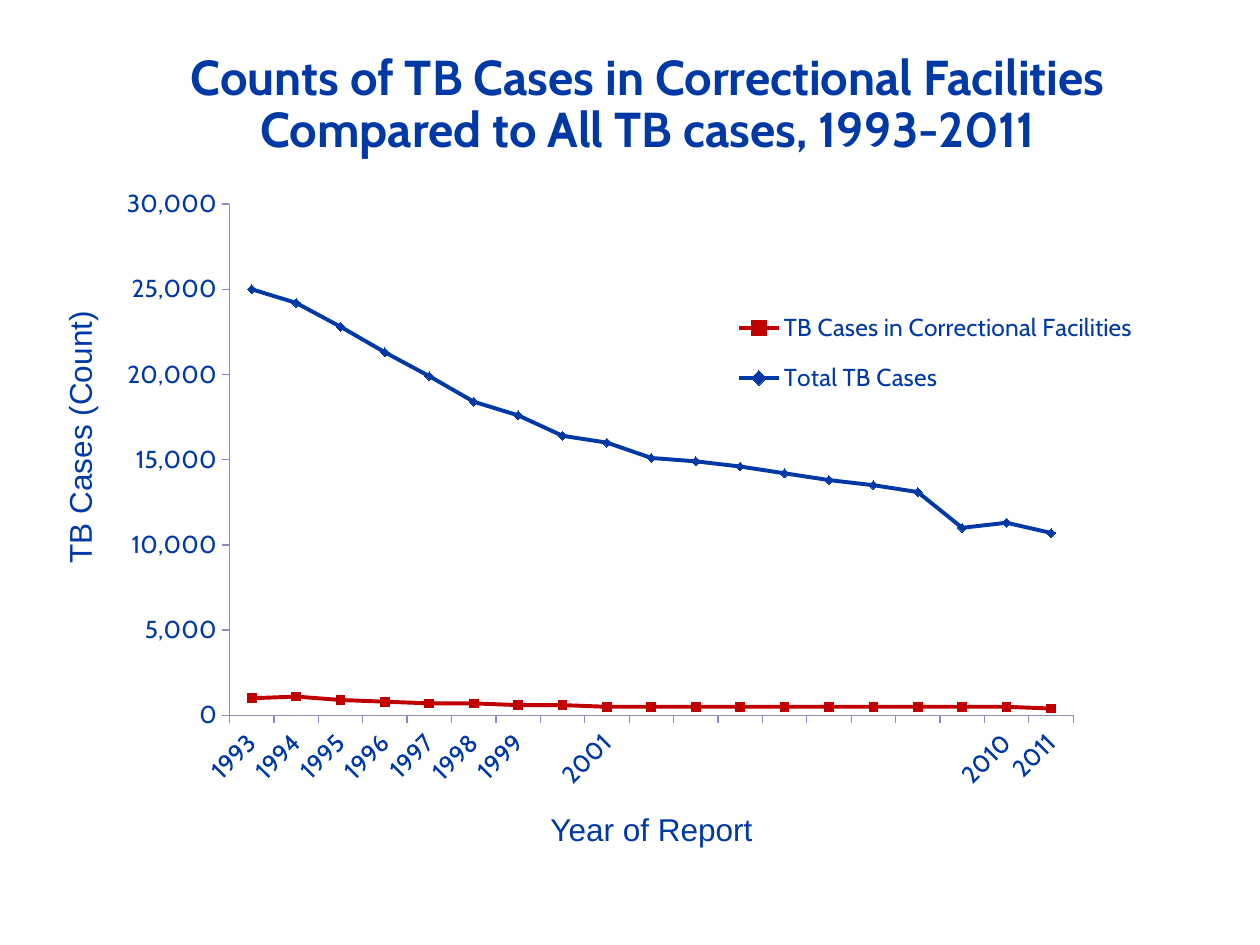
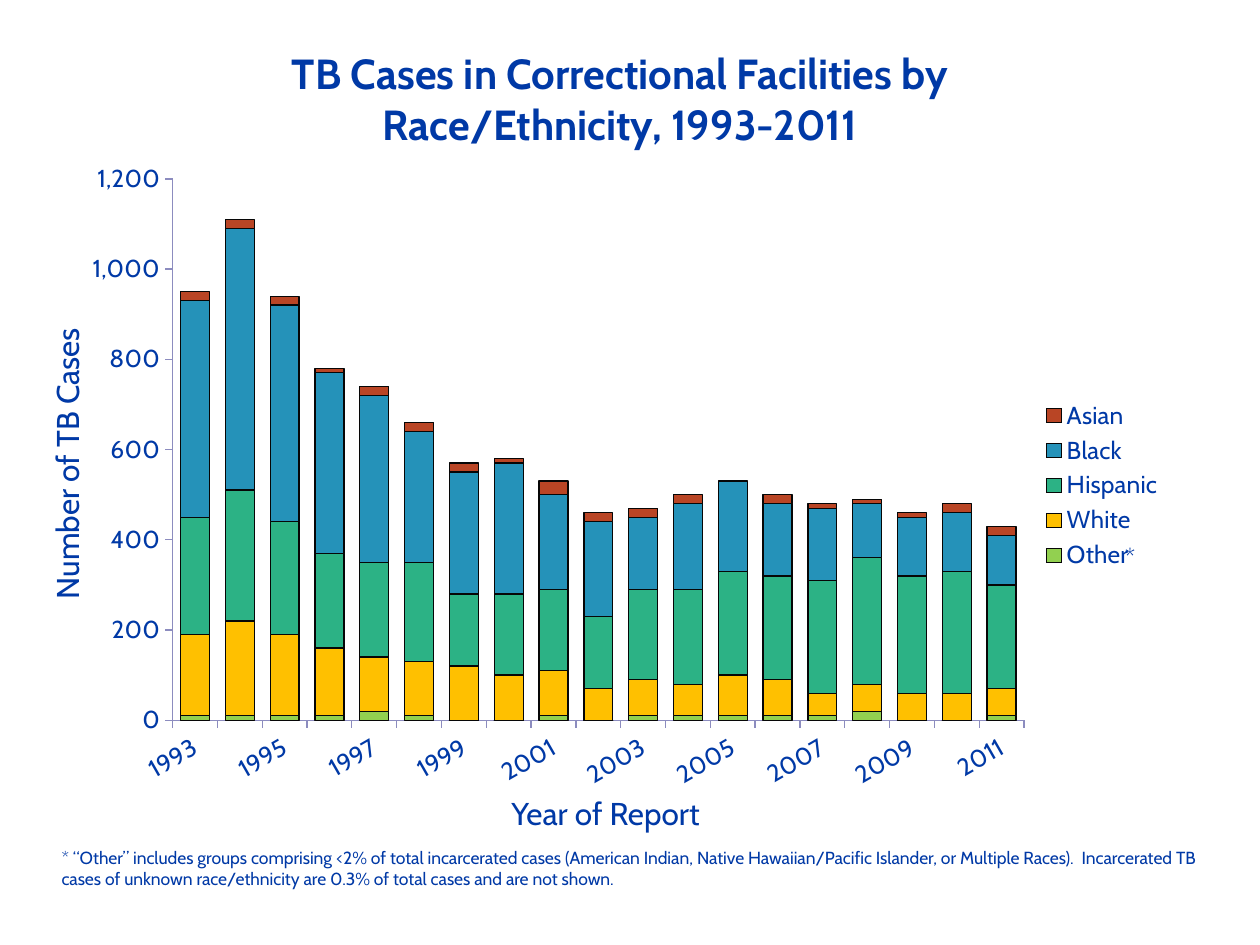
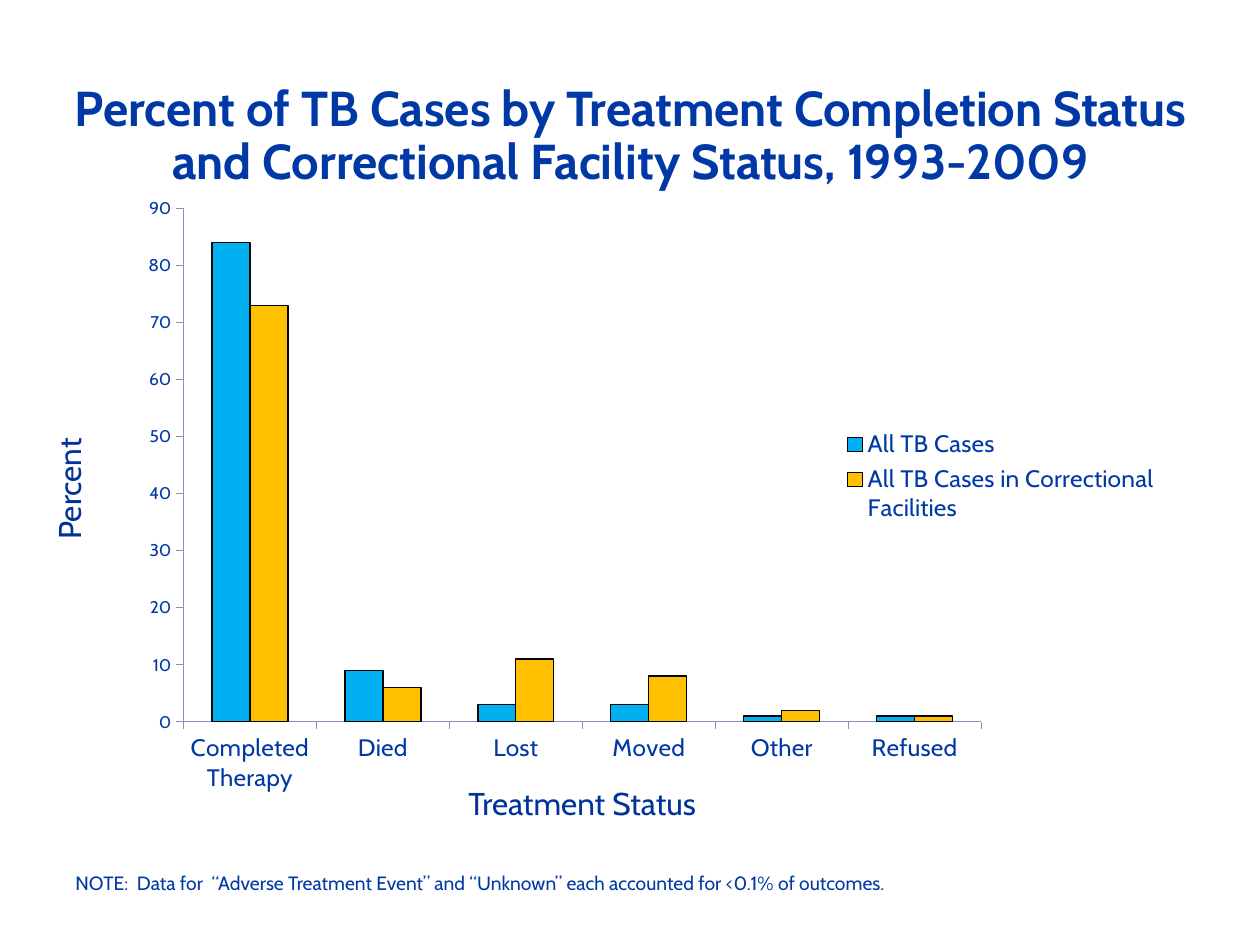
from dataclasses import dataclass

from lxml import etree
from pptx import Presentation
from pptx.chart.data import CategoryChartData
from pptx.dml.color import RGBColor
from pptx.enum.chart import XL_CHART_TYPE, XL_LEGEND_POSITION, XL_TICK_MARK
from pptx.enum.text import MSO_ANCHOR, PP_ALIGN
from pptx.oxml.ns import qn
from pptx.util import Pt

LINE = XL_CHART_TYPE.LINE
STACKED = XL_CHART_TYPE.COLUMN_STACKED
CLUSTERED = XL_CHART_TYPE.COLUMN_CLUSTERED
LEGEND_RIGHT = XL_LEGEND_POSITION.RIGHT
TICK_OUTSIDE, TICK_NONE = XL_TICK_MARK.OUTSIDE, XL_TICK_MARK.NONE
LEFT, CENTER = PP_ALIGN.LEFT, PP_ALIGN.CENTER
TOP, BOTTOM = MSO_ANCHOR.TOP, MSO_ANCHOR.BOTTOM

# Shared scale, colours and fonts
PX = 9144  # 100 px to the inch
BLUE = RGBColor(0x00, 0x39, 0xA6)
DARK_BLUE = RGBColor(0x00, 0x34, 0x98)
AXIS_BLUE = RGBColor(0x8C, 0x8C, 0xBF)
OUTLINE = RGBColor(0x06, 0x06, 0x06)
DARK_RED = RGBColor(0xC0, 0x00, 0x00)
LIME = RGBColor(0x92, 0xD0, 0x50)
GOLD = RGBColor(0xFF, 0xC0, 0x00)
GREEN = RGBColor(0x2C, 0xB2, 0x85)
TEAL = RGBColor(0x25, 0x92, 0xB9)
RUST = RGBColor(0xB9, 0x45, 0x25)
SKY = RGBColor(0x00, 0xB0, 0xF0)
CABIN, ARIAL = "Cabin", "Arial"
YEARS = [str(year) for year in range(1993, 2012)]

Box = tuple[int, int, int, int]
Layout = tuple[float, float, float, float]


@dataclass(frozen=True)
class Label:
    text: str
    box: Box
    size: int = 18
    font: str = CABIN
    color: RGBColor = BLUE
    bold: bool = False
    align: PP_ALIGN = CENTER
    anchor: MSO_ANCHOR = TOP
    line_points: int = 0
    vertical: bool = False
    rotation: int = 0
    wrap: bool = True


@dataclass(frozen=True)
class Series:
    name: str
    color: RGBColor
    values: list[int]


@dataclass(frozen=True)
class ChartPanel:
    kind: XL_CHART_TYPE
    box: Box
    plot: Layout
    legend: Layout
    categories: list[str]
    series: list[Series]
    maximum: int
    step: int
    number_format: str = "#,##0"
    value_size: int = 14
    label_angle: int = 0
    gap: int = 150
    overlap: int = 0


def title(text: str, box: Box) -> Label:
    return Label(text, box, size=28, bold=True, anchor=BOTTOM, line_points=30)


def add_label(slide, label: Label) -> None:
    shape = slide.shapes.add_textbox(*(value * PX for value in label.box))
    shape.rotation = label.rotation
    frame = shape.text_frame
    frame.word_wrap = label.wrap
    frame.vertical_anchor = label.anchor
    if label.vertical:
        frame._txBody.bodyPr.set("vert", "vert270")
    paragraph = frame.paragraphs[0]
    paragraph.text = label.text
    paragraph.alignment = label.align
    if label.line_points:
        paragraph.line_spacing = Pt(label.line_points)
    font = paragraph.font
    font.name, font.size, font.bold = label.font, Pt(label.size), label.bold
    font.color.rgb = label.color


def set_layout(element, layout: Layout, inner: bool = False) -> None:
    """Place a plot area or legend by fractions of the chart."""
    for old in element.findall(qn("c:layout")):
        element.remove(old)
    node = etree.Element(qn("c:layout"))
    manual = etree.SubElement(node, qn("c:manualLayout"))
    settings = [("layoutTarget", "inner")] if inner else []
    settings += [("xMode", "edge"), ("yMode", "edge")]
    settings += zip("xywh", map(str, layout))
    for tag, value in settings:
        etree.SubElement(manual, qn(f"c:{tag}")).set("val", value)
    position = element.find(qn("c:legendPos"))
    if position is None:
        element.insert(0, node)
    else:
        position.addnext(node)


def style_axis(axis, size: int) -> None:
    axis.has_major_gridlines = False
    axis.major_tick_mark, axis.minor_tick_mark = TICK_OUTSIDE, TICK_NONE
    axis.format.line.color.rgb = AXIS_BLUE
    axis.format.line.width = Pt(0.75)
    font = axis.tick_labels.font
    font.name, font.size, font.color.rgb = CABIN, Pt(size), BLUE


def add_chart_panel(slide, panel: ChartPanel) -> None:
    data = CategoryChartData()
    data.categories = panel.categories
    for series in panel.series:
        data.add_series(series.name, series.values)
    box = (value * PX for value in panel.box)
    chart = slide.shapes.add_chart(panel.kind, *box, data).chart
    chart.has_title = False
    chart.font.name, chart.font.size, chart.font.color.rgb = CABIN, Pt(14), BLUE

    # Axes
    style_axis(chart.category_axis, 14)
    style_axis(chart.value_axis, panel.value_size)
    if panel.label_angle:
        body = chart.category_axis._element.find(qn("c:txPr")).find(qn("a:bodyPr"))
        body.set("rot", str(panel.label_angle * 60000))
    value_axis = chart.value_axis
    value_axis.minimum_scale, value_axis.maximum_scale = 0, panel.maximum
    value_axis.major_unit = panel.step
    value_axis.tick_labels.number_format = panel.number_format
    value_axis.tick_labels.number_format_is_linked = False

    # Legend and plot area
    chart.has_legend = True
    chart.legend.position = LEGEND_RIGHT
    chart.legend.include_in_layout = False
    set_layout(chart.legend._element, panel.legend)
    set_layout(chart._chartSpace.chart.plotArea, panel.plot, inner=True)

    # Series
    plot = chart.plots[0]
    plot.vary_by_categories = False
    if panel.kind != LINE:
        plot.gap_width, plot.overlap = panel.gap, panel.overlap
    for drawn, series in zip(plot.series, panel.series):
        line = drawn.format.line
        if panel.kind == LINE:
            drawn.smooth = False
            drawn.marker.style = None
            line.color.rgb, line.width = series.color, Pt(2.25)
        else:
            drawn.format.fill.solid()
            drawn.format.fill.fore_color.rgb = series.color
            line.color.rgb, line.width = OUTLINE, Pt(0.75)


# Slide contents
COUNTS = [
    title("Counts of TB Cases in Correctional Facilities Compared to All TB cases, "
          "1993-2011", (64, 5, 900, 125)),
    ChartPanel(
        LINE, (93, 150, 833, 479), (0.107, 0.023, 0.804, 0.849),
        (0.58, 0.17, 0.4, 0.2), YEARS,
        [
            Series("TB Cases in Correctional Facilities", DARK_RED,
                   [1000, 1100, 900, 800, 700, 700, 600, 600, 500, 500,
                    500, 500, 500, 500, 500, 500, 500, 500, 400]),
            Series("Total TB Cases", BLUE,
                   [25000, 24200, 22800, 21300, 19900, 18400, 17600, 16400, 16000, 15100,
                    14900, 14600, 14200, 13800, 13500, 13100, 11000, 11300, 10700]),
        ],
        maximum=30000, step=5000, label_angle=-45),
    Label("Year of Report", (392, 638, 250, 40), font=ARIAL),
    Label("TB Cases (Count)", (43, 130, 50, 434), font=ARIAL, vertical=True),
]

RACE = [
    Label("TB Cases in Correctional Facilities by Race/Ethnicity, 1993-2011",
          (142, 33, 700, 91), size=24, bold=True),
    Label("Number of TB Cases", (33, 75, 50, 586), vertical=True),
    Label("Year of Report", (396, 625, 174, 40), align=LEFT, wrap=False),
    Label("* “Other” includes groups comprising <2% of total incarcerated cases "
          "(American Indian, Native Hawaiian/Pacific Islander, or Multiple Races).  "
          "Incarcerated TB cases of unknown race/ethnicity are 0.3% of total cases "
          "and are not shown.", (39, 667, 944, 44), size=10, align=LEFT),
    ChartPanel(
        STACKED, (55, 130, 872, 510), (0.094, 0.022, 0.775, 0.844),
        (0.88, 0.36, 0.12, 0.28), YEARS,
        [
            Series("Other", LIME, [10, 10, 10, 10, 20, 10, 0, 0, 10, 0,
                                   10, 10, 10, 10, 10, 20, 0, 0, 10]),
            Series("White", GOLD, [180, 210, 180, 150, 120, 120, 120, 100, 100, 70,
                                   80, 70, 90, 80, 50, 60, 60, 60, 60]),
            Series("Hispanic", GREEN, [260, 290, 250, 210, 210, 220, 160, 180, 180, 160,
                                       200, 210, 230, 230, 250, 280, 260, 270, 230]),
            Series("Black", TEAL, [480, 580, 480, 400, 370, 290, 270, 290, 210, 210,
                                   160, 190, 200, 160, 160, 120, 130, 130, 110]),
            Series("Asian", RUST, [20, 20, 20, 10, 20, 20, 20, 10, 30, 20,
                                   20, 20, 0, 20, 10, 10, 10, 20, 20]),
        ],
        maximum=1200, step=200, label_angle=-30, gap=55, overlap=100),
    Label("*", (883, 425, 58, 34), size=14, align=LEFT),
]

TREATMENT = [
    title("Percent of TB Cases by Treatment Completion Status and Correctional "
          "Facility Status, 1993-2009", (17, 30, 967, 125)),
    Label("NOTE:  Data for  “Adverse Treatment Event” and “Unknown” each accounted "
          "for <0.1% of outcomes.", (50, 667, 900, 48), size=11, align=LEFT,
          anchor=BOTTOM),
    Label("Treatment Status", (358, 617, 208, 40), color=DARK_BLUE),
    Label("Percent", (-4, 368, 117, 40), color=DARK_BLUE, rotation=270),
    ChartPanel(
        CLUSTERED, (108, 150, 817, 479), (0.046, 0.033, 0.775, 0.875),
        (0.68, 0.4, 0.32, 0.18),
        ["Completed Therapy", "Died", "Lost", "Moved", "Other", "Refused"],
        [
            Series("All TB Cases", SKY, [84, 9, 3, 3, 1, 1]),
            Series("All TB Cases in Correctional Facilities", GOLD,
                   [73, 6, 11, 8, 2, 1]),
        ],
        maximum=90, step=10, number_format="0", value_size=10),
]


def main() -> None:
    presentation = Presentation()
    presentation.slide_width, presentation.slide_height = 1000 * PX, 750 * PX
    blank = presentation.slide_layouts[6]
    for contents in (COUNTS, RACE, TREATMENT):
        slide = presentation.slides.add_slide(blank)
        for item in contents:
            if isinstance(item, ChartPanel):
                add_chart_panel(slide, item)
            else:
                add_label(slide, item)
    presentation.save("out.pptx")


if __name__ == "__main__":
    main()
